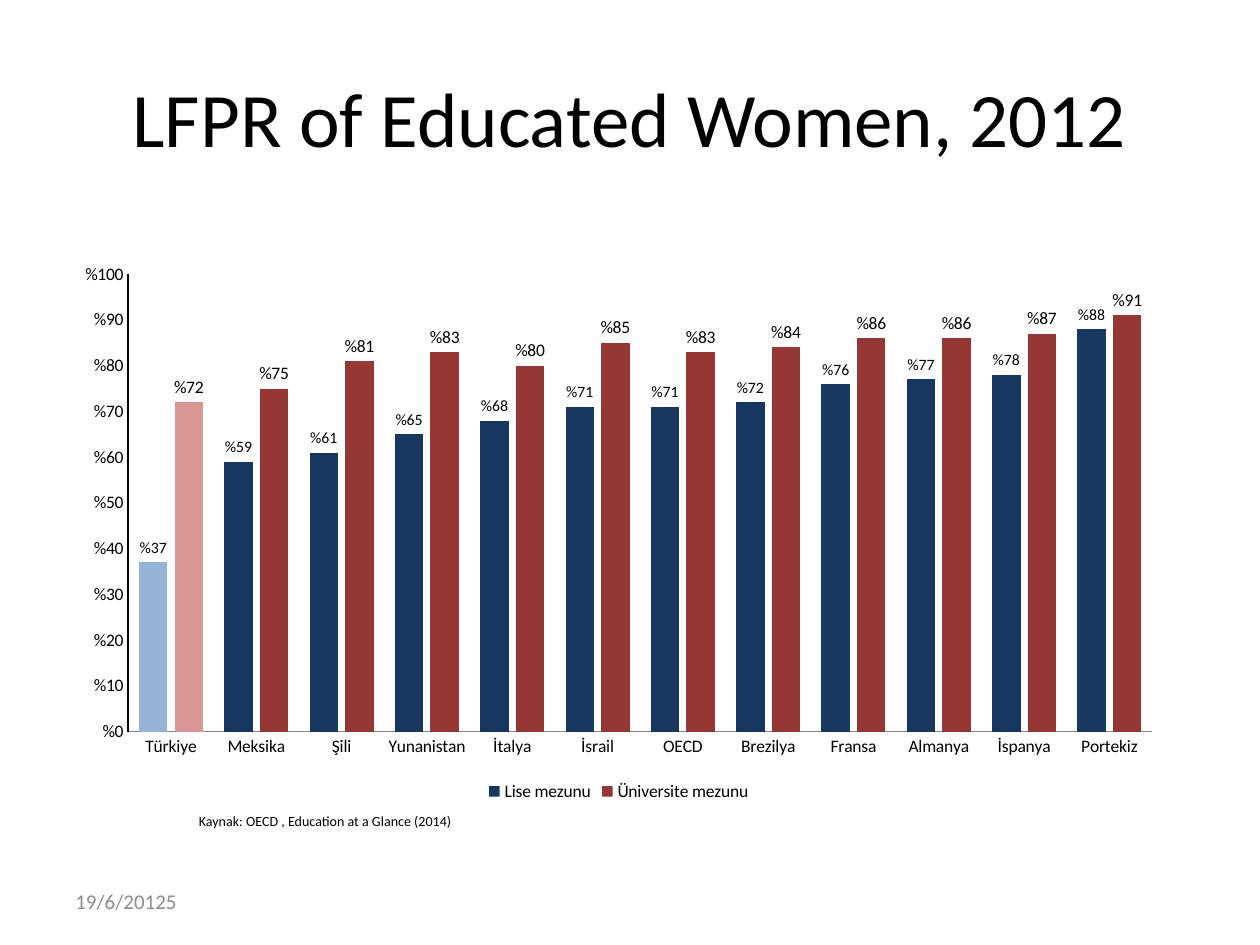
from pptx import Presentation
from pptx.chart.data import CategoryChartData
from pptx.dml.color import RGBColor
from pptx.enum import chart as ch, text as tx
from pptx.util import Inches, Pt

FONT = "Calibri"
BLACK = "000000"
PERCENT = "%0"

TITLE = "LFPR of Educated Women, 2012"
SOURCE = "Kaynak: OECD , Education at a Glance (2014)"
DATE = "19/6/20125"

COUNTRIES = ["Türkiye", "Meksika", "Şili", "Yunanistan", "İtalya", "İsrail",
             "OECD", "Brezilya", "Fransa", "Almanya", "İspanya", "Portekiz"]
# name, rates in percent, colour, colour of the first country, label size
GRADUATES = [
    ("Lise mezunu", [37, 59, 61, 65, 68, 71, 71, 72, 76, 77, 78, 88],
     "17375E", "95B3D7", 9),
    ("Üniversite mezunu", [72, 75, 81, 83, 80, 85, 83, 84, 86, 86, 87, 91],
     "953735", "D99694", 10),
]


def rgb(hex_color):
    return RGBColor.from_string(hex_color)


def style_font(font, size, color=BLACK):
    font.name = FONT
    font.size = Pt(size)
    font.color.rgb = rgb(color)


def place(shape, left, top, width, height):
    shape.left, shape.top = Inches(left), Inches(top)
    shape.width, shape.height = Inches(width), Inches(height)


def write(shape, words, size, color=BLACK, anchor=tx.MSO_ANCHOR.MIDDLE,
          align=tx.PP_ALIGN.LEFT):
    frame = shape.text_frame
    frame.word_wrap = True
    frame.vertical_anchor = anchor
    paragraph = frame.paragraphs[0]
    paragraph.alignment = align
    run = paragraph.add_run()
    run.text = words
    style_font(run.font, size, color)


def add_note(slide, box, words, size, **options):
    note = slide.shapes.add_textbox(*map(Inches, box))
    write(note, words, size, **options)
    return note


def add_rates_chart(slide, box):
    data = CategoryChartData(number_format=PERCENT)
    data.categories = COUNTRIES
    for name, rates, *_ in GRADUATES:
        data.add_series(name, [rate / 100 for rate in rates])
    chart = slide.shapes.add_chart(
        ch.XL_CHART_TYPE.COLUMN_CLUSTERED, *map(Inches, box), data).chart
    style_font(chart.font, 10)
    chart.has_title = False
    chart.has_legend = True
    chart.legend.position = ch.XL_LEGEND_POSITION.BOTTOM
    chart.legend.include_in_layout = False

    for axis in (chart.category_axis, chart.value_axis):
        axis.major_tick_mark = axis.minor_tick_mark = ch.XL_TICK_MARK.NONE
        axis.has_major_gridlines = False
    chart.category_axis.format.line.color.rgb = rgb("868686")
    rate_axis = chart.value_axis
    rate_axis.minimum_scale, rate_axis.maximum_scale = 0, 1
    rate_axis.major_unit = 0.1
    rate_axis.tick_labels.number_format = PERCENT
    rate_axis.tick_labels.number_format_is_linked = False
    rate_axis.format.line.color.rgb = rgb(BLACK)
    rate_axis.format.line.width = Pt(1.25)

    plot = chart.plots[0]
    plot.gap_width, plot.overlap = 75, -25
    plot.vary_by_categories = False
    for series, (_, _, color, first_color, size) in zip(plot.series, GRADUATES):
        for part, fill_color in ((series, color), (series.points[0], first_color)):
            part.format.fill.solid()
            part.format.fill.fore_color.rgb = rgb(fill_color)
        labels = series.data_labels
        labels.show_value = True
        labels.number_format = PERCENT
        labels.number_format_is_linked = False
        labels.position = ch.XL_LABEL_POSITION.OUTSIDE_END
        style_font(labels.font, size)


def main():
    prs = Presentation()
    prs.slide_width, prs.slide_height = Inches(10), Inches(7.5)
    slide = prs.slides.add_slide(prs.slide_layouts[5])

    title = slide.shapes.title
    place(title, 0.5, 0.3, 9, 1.25)
    write(title, TITLE, 44, align=tx.PP_ALIGN.CENTER)

    source = add_note(slide, (1.48, 6.4, 6.53, 0.24), SOURCE, 8,
                      anchor=tx.MSO_ANCHOR.TOP)
    source.text_frame.auto_size = tx.MSO_AUTO_SIZE.SHAPE_TO_FIT_TEXT
    add_rates_chart(slide, (0.5, 2.01, 8.82, 4.39))
    add_note(slide, (0.5, 6.95, 2.33, 0.4), DATE, 12, color="8C8C8C")

    prs.save("out.pptx")


if __name__ == "__main__":
    main()
